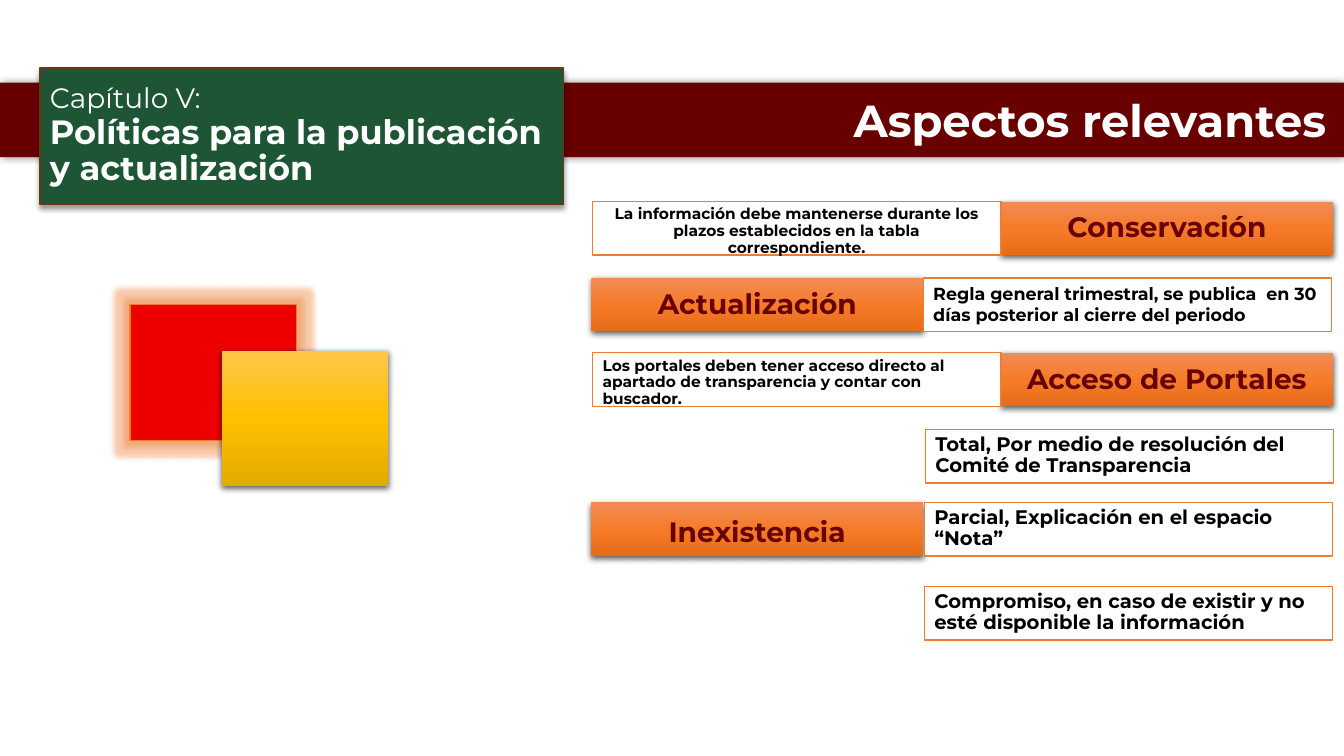
from copy import deepcopy

from lxml import etree
from pptx import Presentation
from pptx import util as u
from pptx.dml.color import RGBColor
from pptx.enum import shapes, text
from pptx.oxml import ns

ORANGE = ["F18C57", "F67B28", "E56C19"]
GOLD = ["FFC64B", "FFC000", "E3AB00"]
CENTER, LEFT, RIGHT = text.PP_ALIGN.CENTER, text.PP_ALIGN.LEFT, text.PP_ALIGN.RIGHT
TOP, MIDDLE = text.MSO_ANCHOR.TOP, text.MSO_ANCHOR.MIDDLE
BUTTON_SHADOW = ("outerShdw", "000000", 63, {"blurRad": 4.5, "dist": 1.5})


def style(shape, box, colors, border=None, effect=None):
    for name, value in zip(("left", "top", "width", "height"), box):
        setattr(shape, name, u.Pt(value))
    if len(colors) == 1:
        shape.fill.solid()
        shape.fill.fore_color.rgb = RGBColor.from_string(colors[0])
    else:
        shape.fill.gradient()
        shape.fill.gradient_angle = 270
        stop_list = shape.element.spPr.find(".//" + ns.qn("a:gsLst"))
        stop_list.insert(1, deepcopy(stop_list[0]))
        for stop, color, position in zip(shape.fill.gradient_stops, colors, (0, 0.5, 1)):
            stop.color.rgb = RGBColor.from_string(color)
            stop.position = position
    if border:
        shape.line.color.rgb = RGBColor.from_string(border)
        shape.line.width = u.Pt(1)
    else:
        shape.line.fill.background()
    shape.shadow.inherit = False
    if effect:
        kind, color, opacity, lengths = effect
        effects = shape.element.spPr.find(ns.qn("a:effectLst"))
        node = etree.SubElement(effects, ns.qn("a:" + kind))
        for name, value in lengths.items():
            node.set(name, str(int(u.Pt(value))))
        if kind == "outerShdw":
            node.set("dir", "5400000")
            node.set("rotWithShape", "0")
        tint = etree.SubElement(node, ns.qn("a:srgbClr"), val=color)
        etree.SubElement(tint, ns.qn("a:alpha"), val=str(opacity * 1000))


def write(shape, runs, align, anchor, spacing):
    frame = shape.text_frame
    frame.word_wrap = True
    frame.auto_size = text.MSO_AUTO_SIZE.NONE
    frame.vertical_anchor = anchor
    paragraph = frame.paragraphs[0]
    paragraph.alignment = align
    paragraph.line_spacing = spacing
    for index, (words, size, color, bold) in enumerate(runs):
        if index:
            paragraph.add_line_break()
        run = paragraph.add_run()
        run.text = words
        run.font.color.rgb = RGBColor.from_string(color)
        for name, value in {"name": "Montserrat", "size": u.Pt(size), "bold": bold}.items():
            setattr(run.font, name, value)


presentation = Presentation()
presentation.slide_width = u.Pt(960)
presentation.slide_height = u.Pt(540)
slide = presentation.slides.add_slide(presentation.slide_layouts[5])
RECTANGLE = shapes.MSO_SHAPE.RECTANGLE

glow = ("glow", "ED7D31", 40, {"rad": 8})
band_shadow = ("outerShdw", "000000", 40, {"blurRad": 5, "dist": 0})
title_shadow = ("outerShdw", "000000", 40, {"blurRad": 4, "dist": 3})

red_square = slide.shapes.add_shape(RECTANGLE, 0, 0, 0, 0)
style(red_square, (93, 217.5, 119, 97), ["EE0000"], "ED7D31", glow)
gold_square = slide.shapes.add_shape(RECTANGLE, 0, 0, 0, 0)
style(gold_square, (158.5, 250.5, 119, 97), GOLD, None, BUTTON_SHADOW)

band = slide.shapes.add_shape(RECTANGLE, 0, 0, 0, 0)
style(band, (0, 59, 960, 53.3), ["680000"], None, band_shadow)
band.text_frame.margin_right = u.Pt(12.5)
write(band, [("Aspectos relevantes", 32, "FFFFFF", True)], RIGHT, MIDDLE, 1.0)

title = slide.shapes.title
title.element.getparent().append(title.element)
style(title, (28.5, 48.5, 374, 97.5), ["1E5635"], "683715", title_shadow)
write(title, [
    ("Capítulo V:", 20, "FFFFFF", False),
    ("Políticas para la publicación y actualización", 24, "FFFFFF", True),
], LEFT, MIDDLE, 0.9)

buttons = [
    ("Conservación", 715, 144, 1.1),
    ("Actualización", 422.5, 198.5, 1.1),
    ("Acceso de Portales", 715, 252, 1.1),
    ("Inexistencia", 422.3, 358.8, 1.2),
]
for words, left, top, spacing in buttons:
    button = slide.shapes.add_shape(RECTANGLE, 0, 0, 0, 0)
    style(button, (left, top, 237, 38.3), ORANGE, None, BUTTON_SHADOW)
    write(button, [(words, 20, "680000", True)], CENTER, TOP, spacing)

notes = [
    ("La información debe mantenerse durante los plazos establecidos en la tabla correspondiente.",
     423.3, 144, 11, CENTER, 0.9),
    ("Regla general trimestral, se publica  en 30 días posterior al cierre del periodo",
     659.5, 198.5, 12.5, LEFT, 1.0),
    ("Los portales deben tener acceso directo al apartado de transparencia y contar con buscador.",
     423.3, 252, 11, LEFT, 0.9),
    ("Total, Por medio de resolución del Comité de Transparencia", 661, 306.7, 14, LEFT, 0.9),
    ("Parcial, Explicación en el espacio “Nota”", 660.3, 359, 14, LEFT, 0.9),
    ("Compromiso, en caso de existir y no esté disponible la información",
     660.3, 419, 14, LEFT, 0.9),
]
for words, left, top, size, align, spacing in notes:
    note = slide.shapes.add_shape(RECTANGLE, 0, 0, 0, 0)
    style(note, (left, top, 291.6, 38.3), ["FFFFFF"], "ED7D31")
    write(note, [(words, size, "000000", True)], align, TOP, spacing)

presentation.save("out.pptx")
